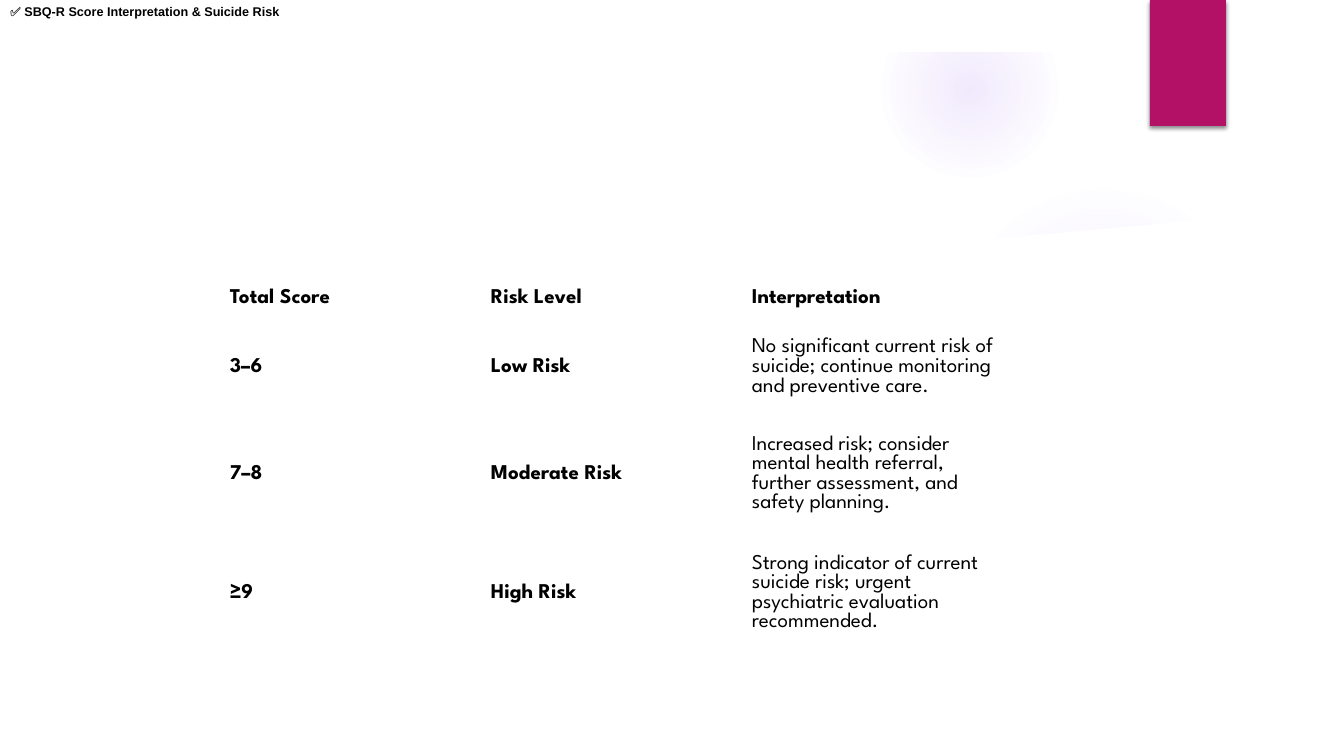
"""Build the SBQ-R score interpretation slide."""
from dataclasses import dataclass

from pptx import Presentation
from pptx.dml.color import RGBColor
from pptx.enum.shapes import MSO_SHAPE
from pptx.enum.text import MSO_ANCHOR, MSO_AUTO_SIZE, PP_ALIGN
from pptx.oxml import parse_xml
from pptx.oxml.ns import nsdecls
from pptx.util import Pt

EMU_PER_PX = 914400 / 100.8


@dataclass(frozen=True)
class Theme:
    """Colours, fonts and type sizes."""
    ink: str = "000000"
    paper: str = "FFFFFF"
    accent: str = "B31166"
    glow: str = "9B6BF2"
    title_font: str = "Arial"
    table_font: str = "League Spartan"
    title_size: int = 9
    table_size: int = 15


def px(length):
    """Turn pixels into EMU."""
    return round(length * EMU_PER_PX)


def apply(target, values):
    """Set attributes from a dict."""
    for name, value in values.items():
        setattr(target, name, value)


class SlideBuilder:
    """Draw elements on one slide in one style."""

    def __init__(self, deck, theme):
        """Add a title-only slide."""
        self.theme = theme
        self.page = deck.slides.add_slide(deck.slide_layouts[5])
        self.shapes = self.page.shapes
        self.page.background.fill.solid()
        self.page.background.fill.fore_color.rgb = RGBColor.from_string(theme.paper)

    def add_text(self, frame, text, font, size, bold):
        """Fill a text frame with one left-aligned paragraph."""
        para = frame.paragraphs[0]
        para.alignment = PP_ALIGN.LEFT
        span = para.add_run()
        span.text = text
        apply(span.font, {"name": font, "size": Pt(size), "bold": bold})
        span.font.color.rgb = RGBColor.from_string(self.theme.ink)

    def finish(self, shape, colour):
        """Give a shape a plain fill without line or shadow."""
        shape.shadow.inherit = False
        shape.line.fill.background()
        shape.fill.solid()
        shape.fill.fore_color.rgb = RGBColor.from_string(colour)

    def block(self, left, top, width, height, colour):
        """Add a plain rectangle."""
        box = self.shapes.add_shape(MSO_SHAPE.RECTANGLE, *map(px, (left, top, width, height)))
        self.finish(box, colour)
        return box

    def ribbon(self, left, top, width, height):
        """Add the accent rectangle with a soft shadow."""
        box = self.block(left, top, width, height, self.theme.accent)
        effects = box._element.spPr.find("{*}effectLst")
        effects.append(parse_xml(
            f'<a:outerShdw {nsdecls("a")} blurRad="{Pt(3)}" dist="{Pt(2)}" dir="5400000" rotWithShape="0">'
            f'<a:srgbClr val="{self.theme.ink}"><a:alpha val="45000"/></a:srgbClr></a:outerShdw>'))

    def halo(self, left, top, size, stops):
        """Add a circle that fades out from its centre."""
        circle = self.shapes.add_shape(MSO_SHAPE.OVAL, *map(px, (left, top, size, size)))
        circle.shadow.inherit = False
        circle.line.fill.background()
        steps = "".join(
            f'<a:gs pos="{place * 1000}"><a:srgbClr val="{self.theme.glow}">'
            f'<a:alpha val="{alpha * 1000}"/></a:srgbClr></a:gs>' for place, alpha in stops)
        circle._element.spPr.insert(2, parse_xml(
            f'<a:gradFill {nsdecls("a")}><a:gsLst>{steps}</a:gsLst><a:path path="circle">'
            '<a:fillToRect l="50000" t="50000" r="50000" b="50000"/></a:path></a:gradFill>'))

    def outline(self, points):
        """Add a closed paper-coloured outline."""
        builder = self.shapes.build_freeform(*points[0], scale=EMU_PER_PX)
        builder.add_line_segments(points[1:], close=True)
        self.finish(builder.convert_to_shape(), self.theme.paper)

    def table(self, left, top, column_width, row_heights, rows):
        """Add a clear table with a bold header and bold labels."""
        width, height = column_width * len(rows[0]), sum(row_heights)
        grid = self.shapes.add_table(
            len(rows), len(rows[0]), *map(px, (left, top, width, height))).table
        apply(grid, {"first_row": False, "horz_banding": False})
        for column in grid.columns:
            column.width = px(column_width)
        for row_index, (row, row_height) in enumerate(zip(rows, row_heights)):
            grid.rows[row_index].height = px(row_height)
            for column_index, text in enumerate(row):
                cell = grid.cell(row_index, column_index)
                cell.fill.background()
                apply(cell, {"vertical_anchor": MSO_ANCHOR.MIDDLE,
                             "margin_left": px(8), "margin_right": px(8),
                             "margin_top": px(4), "margin_bottom": px(4)})
                self.add_text(cell.text_frame, text, self.theme.table_font,
                              self.theme.table_size, row_index == 0 or column_index < 2)

    def title(self, left, top, width, height, text):
        """Place the title in front of everything else."""
        box = self.shapes.title
        apply(box, dict(zip(("left", "top", "width", "height"),
                            map(px, (left, top, width, height)))))
        apply(box.text_frame, {"auto_size": MSO_AUTO_SIZE.NONE, "word_wrap": True,
                               "vertical_anchor": MSO_ANCHOR.MIDDLE,
                               "margin_left": px(10), "margin_top": 0, "margin_bottom": 0})
        self.add_text(box.text_frame, text, self.theme.title_font, self.theme.title_size, True)
        self.shapes._spTree.append(box._element)


WAVE = [(50, 206), (50, 706), (1294, 706), (1294, 206), (1182, 222), (1068, 232),
        (957, 243), (792, 249), (662, 250), (539, 247), (404, 240), (251, 229), (136, 217)]
SCORES = [
    ("Total Score", "Risk Level", "Interpretation"),
    ("3–6", "Low Risk",
     "No significant current risk of suicide; continue monitoring and preventive care."),
    ("7–8", "Moderate Risk",
     "Increased risk; consider mental health referral, further assessment, and safety planning."),
    ("≥9", "High Risk",
     "Strong indicator of current suicide risk; urgent psychiatric evaluation recommended."),
]


def main():
    """Build and save the deck."""
    deck = Presentation()
    apply(deck, {"slide_width": px(1344), "slide_height": px(756)})
    theme = Theme()
    slide = SlideBuilder(deck, theme)
    slide.halo(949, 184, 310, [(0, 7), (36, 6), (69, 0)])
    slide.halo(882, 1, 176, [(0, 14), (36, 7), (73, 0)])
    slide.outline(WAVE)
    slide.block(0, 0, 1344, 52, theme.paper)
    slide.ribbon(1150, 0, 76, 126)
    slide.table(222, 282, 261, [32, 107, 107, 131], SCORES)
    slide.title(0, 0, 1344, 22, "✅ SBQ-R Score Interpretation & Suicide Risk")
    deck.save("out.pptx")


if __name__ == "__main__":
    main()
